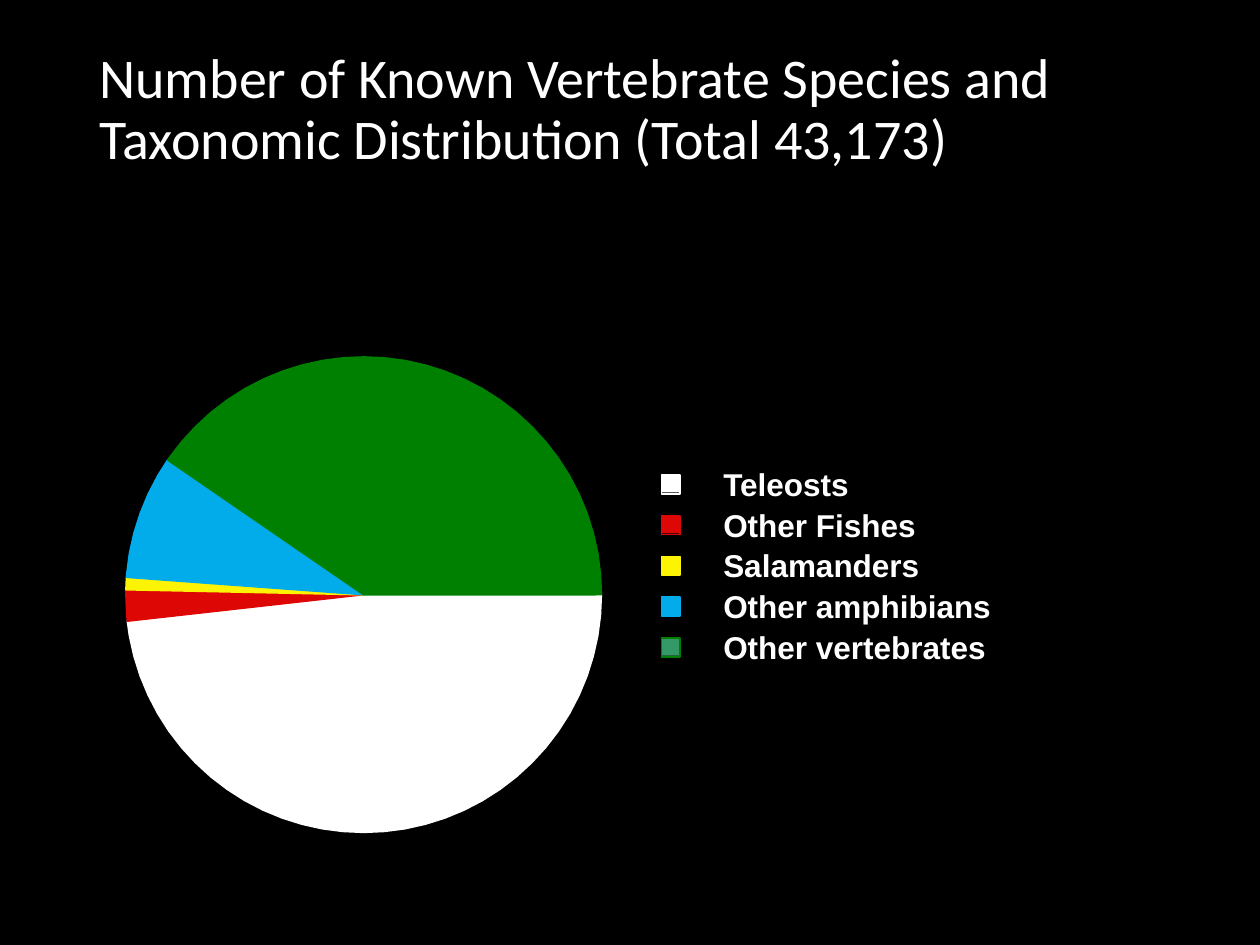
import math

from pptx import Presentation
from pptx.dml.color import RGBColor
from pptx.enum import shapes, text
from pptx.util import Pt

WHITE = "FFFFFF"
# Group, slice colour, legend colour, end angle (degrees clockwise from the right)
GROUPS = [
    ("Teleosts", WHITE, WHITE, 173.6),
    ("Other Fishes", "DD0806", "DD0806", 181.2),
    ("Salamanders", "FCF305", "FCF305", 184.2),
    ("Other amphibians", "02ABEA", "02ABEA", 214.5),
    ("Other vertebrates", "008000", "339966", 360),
]


def rgb(value):
    return RGBColor.from_string(value)


def style(shape, fill=None, line=None):
    shape.shadow.inherit = False
    if fill:
        shape.fill.solid()
        shape.fill.fore_color.rgb = rgb(fill)
    else:
        shape.fill.background()
    if line:
        shape.line.color.rgb = rgb(line)
        shape.line.width = Pt(1)
    else:
        shape.line.fill.background()


def add_text(slide, box, words, font, size, bold=False, wrap=False, side=0):
    label = slide.shapes.add_textbox(*map(Pt, box))
    frame = label.text_frame
    frame.word_wrap = wrap
    frame.vertical_anchor = text.MSO_ANCHOR.TOP
    frame.margin_left = frame.margin_right = Pt(side)
    frame.margin_top = frame.margin_bottom = 0
    paragraph = frame.paragraphs[0]
    run = paragraph.add_run()
    run.text = words
    run.font.name, run.font.size, run.font.bold = font, Pt(size), bold
    run.font.color.rgb = rgb(WHITE)
    return paragraph


def add_title(slide, box):
    words = "Number of Known Vertebrate Species and Taxonomic Distribution (Total 43,173)"
    paragraph = add_text(slide, box, words, "Calibri", 32, wrap=True, side=7.2)
    paragraph.line_spacing = 0.9


def add_pie(slide, box):
    left, top, size, _ = box
    radius = size / 2
    center_x, center_y = left + radius, top + radius
    step = 5  # the rim is a polygon with a corner every 5 degrees

    def rim(angle):
        turn = math.radians(angle)
        return (Pt(center_x + radius * math.cos(turn)),
                Pt(center_y + radius * math.sin(turn)))

    start = 0
    for _, color, _, end in GROUPS:
        corners = [a for a in range(0, 360, step) if start < a < end]
        outline = [rim(a) for a in (start, *corners, end)]
        builder = slide.shapes.build_freeform(Pt(center_x), Pt(center_y))
        builder.add_line_segments(outline, close=True)
        style(builder.convert_to_shape(), color, color)
        start = end


def add_legend(slide, box):
    left, top, width, height = box
    pitch = height / len(GROUPS)
    label_left = 35.3
    for row, (name, frame_color, fill_color, _) in enumerate(GROUPS):
        y = top + row * pitch
        # Key: a filled square under a slightly larger frame
        for side, fill, line in ((10.1, fill_color, None), (10.8, None, frame_color)):
            key = slide.shapes.add_shape(
                shapes.MSO_SHAPE.RECTANGLE, Pt(left), Pt(y + 5.7), Pt(side), Pt(side))
            style(key, fill, line)
        add_text(slide, (left + label_left, y, width - label_left, 21.6),
                 name, "Arial", 18, bold=True)


def main():
    deck = Presentation()
    deck.slide_width, deck.slide_height = Pt(720), Pt(540)
    slide = deck.slides.add_slide(deck.slide_layouts[6])
    slide.background.fill.solid()
    slide.background.fill.fore_color.rgb = rgb("000000")

    add_pie(slide, (72, 204, 271.6, 271.6))
    add_legend(slide, (378, 265.7, 190, 116.5))
    add_title(slide, (49.7, 28.8, 620.6, 104.4))
    deck.save("out.pptx")


if __name__ == "__main__":
    main()
